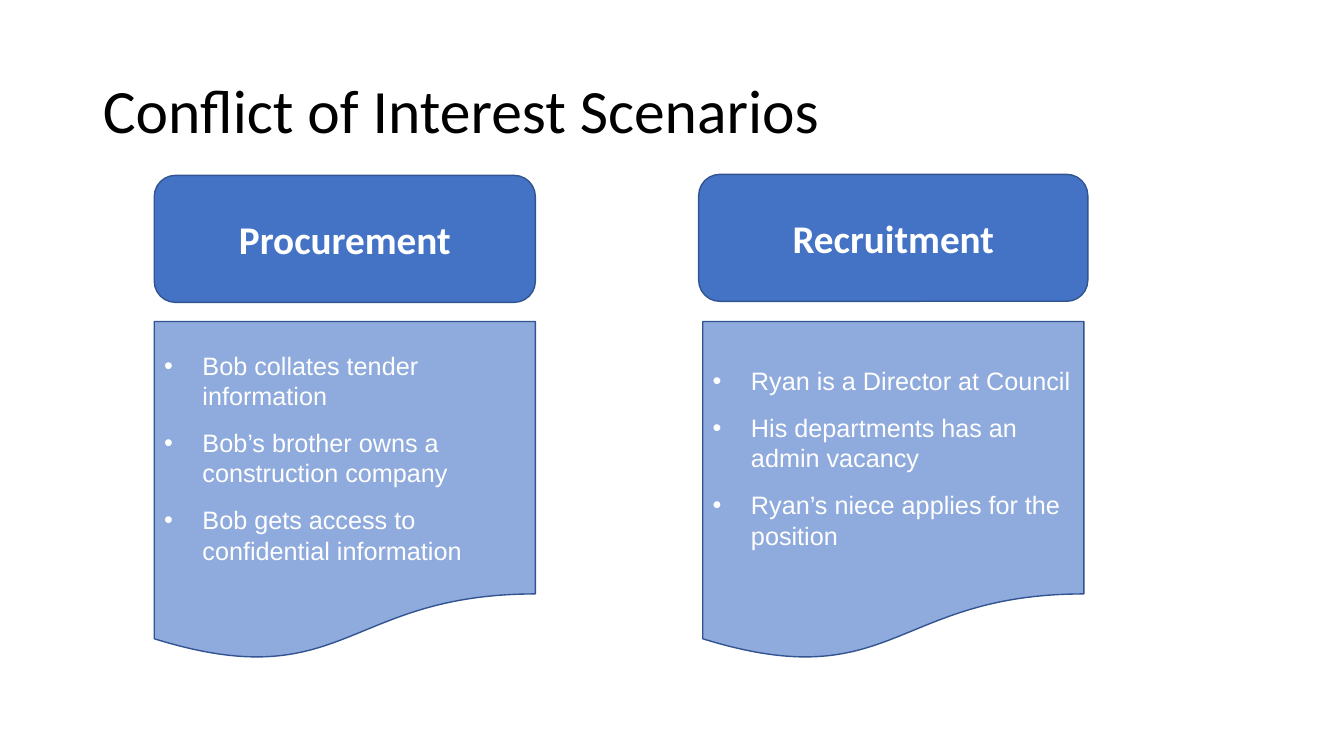
"""Build the slide that sets out two conflict of interest scenarios."""
from lxml import etree
from pptx import Presentation
from pptx.dml.color import RGBColor
from pptx.enum.shapes import MSO_SHAPE
from pptx.enum.text import MSO_ANCHOR, MSO_AUTO_SIZE, PP_ALIGN
from pptx.oxml.ns import qn
from pptx.util import Inches, Pt

ROUNDED = MSO_SHAPE.ROUNDED_RECTANGLE
DOCUMENT = MSO_SHAPE.FLOWCHART_DOCUMENT
MIDDLE = MSO_ANCHOR.MIDDLE
LEFT, CENTER = PP_ALIGN.LEFT, PP_ALIGN.CENTER

TITLE_FONT = {"name": "Calibri", "size": Pt(44), "bold": False}
HEADING_FONT = {"name": "Calibri", "size": Pt(28), "bold": True}
BODY_FONT = {"name": "Arial", "size": Pt(18), "bold": False}
CARD_WIDTH, CARD_TOP, CARD_HEIGHT = 3.78, 3.19, 3.37
HEADING_HEIGHT = 1.26
INDENT = Inches(0.38)

SCENARIOS = [
    {"heading": "Procurement", "left": 1.53, "top": 1.74, "overhang": 0,
     "points": ["Bob collates tender information",
                "Bob’s brother owns a construction company",
                "Bob gets access to confidential information"]},
    {"heading": "Recruitment", "left": 6.97, "top": 1.73, "overhang": 0.04,
     "points": ["Ryan is a Director at Council",
                "His departments has an admin vacancy",
                "Ryan’s niece applies for the position"]},
]


def write(para, text, style, color, align):
    """Fill a paragraph with one formatted run."""
    para.alignment = align
    span = para.add_run()
    span.text = text
    for key, value in style.items():
        setattr(span.font, key, value)
    span.font.color.rgb = RGBColor.from_string(color)


def add_panel(page, kind, area, fill):
    """Add an outlined panel and return its text frame."""
    box = page.shapes.add_shape(kind, *[Inches(length) for length in area])
    box.shadow.inherit = False
    box.fill.solid()
    box.fill.fore_color.rgb = RGBColor.from_string(fill)
    box.line.color.rgb = RGBColor.from_string("325491")
    box.line.width = Pt(1)
    frame = box.text_frame
    frame.word_wrap = True
    frame.vertical_anchor = MIDDLE
    return frame


deck = Presentation()
deck.slide_width, deck.slide_height = Inches(13.33), Inches(7.5)
page = deck.slides.add_slide(deck.slide_layouts[5])

title = page.shapes.title
title.left, title.top = Inches(0.92), Inches(0.4)
title.width, title.height = Inches(11.5), Inches(1.45)
title.text_frame.auto_size = MSO_AUTO_SIZE.NONE
title.text_frame.vertical_anchor = MIDDLE
title_para = title.text_frame.paragraphs[0]
title_para.line_spacing = 0.9
write(title_para, "Conflict of Interest Scenarios", TITLE_FONT, "000000", LEFT)

for scenario in SCENARIOS:
    left, overhang = scenario["left"], scenario["overhang"]
    heading_area = (left - overhang, scenario["top"],
                    CARD_WIDTH + 2 * overhang, HEADING_HEIGHT)
    heading = add_panel(page, ROUNDED, heading_area, "4472C4")
    write(heading.paragraphs[0], scenario["heading"], HEADING_FONT, "FFFFFF", CENTER)

    card_area = (left, CARD_TOP, CARD_WIDTH, CARD_HEIGHT)
    card = add_panel(page, DOCUMENT, card_area, "8FAADC")
    for index, point in enumerate(scenario["points"]):
        para = card.add_paragraph() if index else card.paragraphs[0]
        para.space_before = Pt(6 if index else 0)
        para.space_after = Pt(6)
        properties = para._p.get_or_add_pPr()
        properties.set("marL", str(INDENT))
        properties.set("indent", str(-INDENT))
        etree.SubElement(properties, qn("a:buFont"), typeface="Arial")
        etree.SubElement(properties, qn("a:buChar"), char="•")
        write(para, point, BODY_FONT, "FFFFFF", LEFT)

deck.save("out.pptx")
